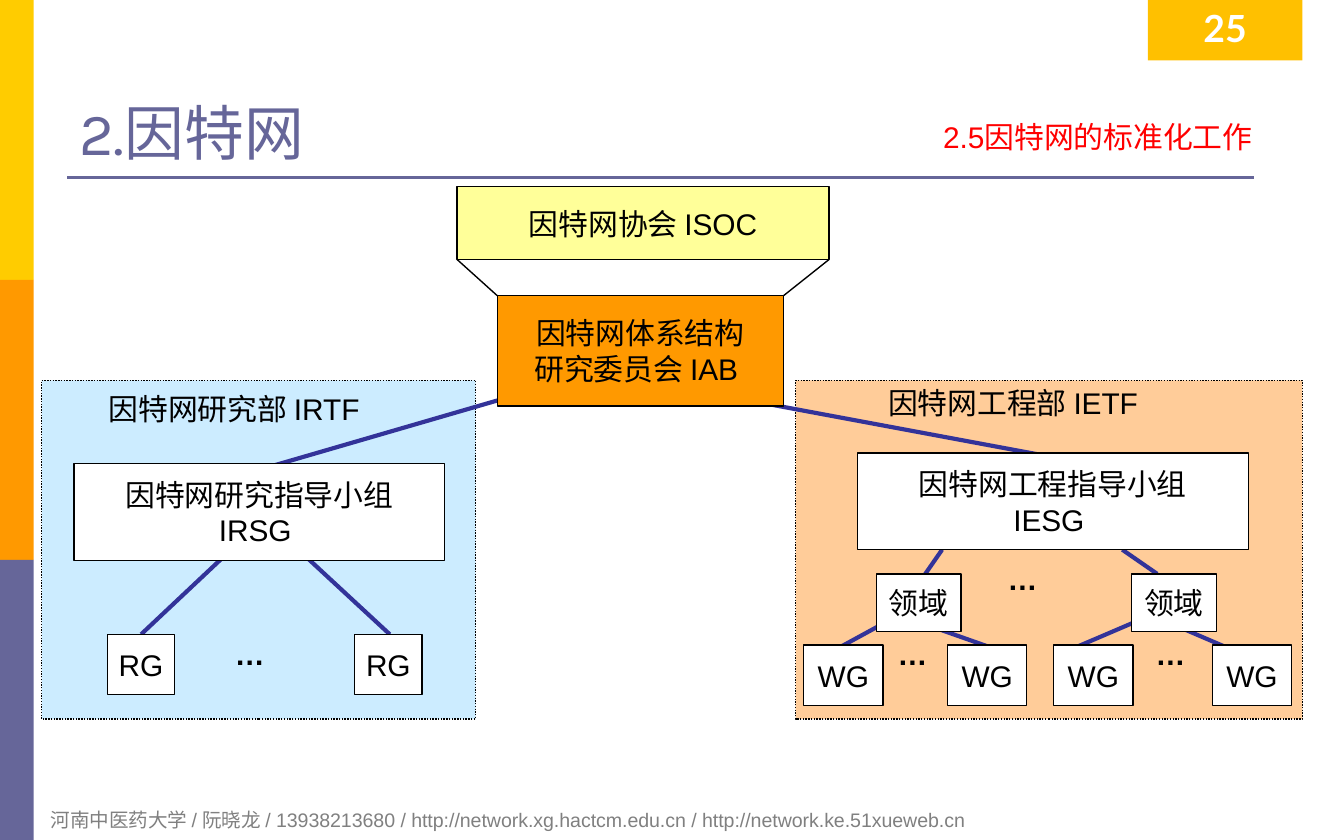
from lxml.etree import SubElement
from pptx import Presentation
from pptx.dml.color import RGBColor
from pptx.enum.dml import MSO_LINE
from pptx.enum.shapes import MSO_CONNECTOR, MSO_SHAPE
from pptx.enum.text import MSO_ANCHOR, PP_ALIGN
from pptx.oxml.ns import qn
from pptx.util import Inches, Pt


def paint(color_format, color):
    color_format.rgb = RGBColor.from_string(color)


def write(box, text, size=16, color="000000", font="Arial", align=PP_ALIGN.LEFT,
          anchor=MSO_ANCHOR.TOP, wrap=False, bold=False):
    frame = box.text_frame
    frame.text = text
    frame.word_wrap = wrap
    frame.vertical_anchor = anchor
    for para in frame.paragraphs:
        para.alignment = align
        for span in para.runs:
            span.font.size = Pt(size)
            span.font.name = font
            span.font.bold = bold
            paint(span.font.color, color)


deck = Presentation()
deck.slide_width = Inches(10)
deck.slide_height = Inches(6.25)
page = deck.slides.add_slide(deck.slide_layouts[6])
shapes = page.shapes

band_height = 6.25 / 3
bands = [(0, band_height * row, 0.25, band_height, color)
         for row, color in enumerate(["FFCC00", "FF9900", "666699"])]
panels = [(0.31, 2.83, 3.23, 2.52, "CCECFF"), (5.92, 2.83, 3.77, 2.52, "FFCC99")]
for left, top, width, height, color in bands + panels:
    area = shapes.add_shape(MSO_SHAPE.RECTANGLE, Inches(left), Inches(top),
                            Inches(width), Inches(height))
    area.shadow.inherit = False
    area.fill.solid()
    paint(area.fill.fore_color, color)
    if left == 0:
        area.line.fill.background()
    else:
        paint(area.line.color, "000000")
        area.line.width = Pt(0.75)
        area.line.dash_style = MSO_LINE.ROUND_DOT

rule = [(0.5, 1.32, 9.33, 1.32)]
funnel = [(3.4, 1.93, 3.7, 2.2), (6.17, 1.93, 5.83, 2.2)]
branches = [
    (2.05, 3.46, 3.7, 2.98), (7.72, 3.38, 5.25, 2.92),
    (1.72, 4.09, 1.05, 4.72), (2.22, 4.09, 2.9, 4.72),
    (7.01, 4.09, 6.85, 4.32), (8.35, 4.09, 8.61, 4.27),
    (6.59, 4.63, 6.26, 4.81), (6.84, 4.63, 7.35, 4.81),
    (8.44, 4.63, 8.02, 4.81), (8.69, 4.63, 9.11, 4.81),
]
for lines, color, weight in [(rule, "666699", 1.5), (funnel, "000000", 0.75),
                             (branches, "333399", 2.25)]:
    for ends in lines:
        connector = shapes.add_connector(MSO_CONNECTOR.STRAIGHT,
                                         *[Inches(value) for value in ends])
        paint(connector.line.color, color)
        connector.line.width = Pt(weight)
        SubElement(connector._element.spPr, qn("a:effectLst"))

units = [
    ("因特网协会 ISOC", 3.4, 1.39, 2.77, 0.54, "FFFF99"),
    ("因特网体系结构\n研究委员会 IAB ", 3.7, 2.2, 2.13, 0.82, "FF9900"),
    ("因特网研究指导小组\nIRSG ", 0.55, 3.45, 2.76, 0.72, "FFFFFF"),
    ("因特网工程指导小组\nIESG ", 6.38, 3.37, 2.91, 0.72, "FFFFFF"),
]
units += [("RG", left, 4.72, 0.5, 0.45, "FFFFFF") for left in (0.8, 2.64)]
units += [("领域", left, 4.27, 0.63, 0.43, "FFFFFF") for left in (6.52, 8.42)]
units += [("WG", left, 4.8, 0.59, 0.45, "FFFFFF") for left in (5.98, 7.05, 7.84, 9.02)]
for text, left, top, width, height, color in units:
    unit = shapes.add_shape(MSO_SHAPE.RECTANGLE, Inches(left), Inches(top),
                            Inches(width), Inches(height))
    unit.shadow.inherit = False
    unit.fill.solid()
    paint(unit.fill.fore_color, color)
    paint(unit.line.color, "000000")
    unit.line.width = Pt(0.75)
    write(unit, text, align=PP_ALIGN.CENTER, anchor=MSO_ANCHOR.MIDDLE)

for text, left, top, width in [
    ("因特网研究部 IRTF", 0.71, 2.86, 2.17), ("因特网工程部 IETF", 6.51, 2.81, 2.16),
    ("…", 1.65, 4.68, 0.43), ("…", 7.4, 4.12, 0.43),
    ("…", 6.58, 4.68, 0.43), ("…", 8.5, 4.68, 0.43),
]:
    label = shapes.add_textbox(Inches(left), Inches(top), Inches(width), Inches(0.37))
    write(label, text, bold=text == "…")

title = shapes.add_textbox(Inches(0.5), Inches(0.25), Inches(9), Inches(1.04))
write(title, "2.因特网", 32, "666699", "Karla", anchor=MSO_ANCHOR.BOTTOM, wrap=True)

section = shapes.add_textbox(Inches(6.26), Inches(0.84), Inches(3.15), Inches(0.39))
write(section, "2.5因特网的标准化工作", 16, "FF0000", align=PP_ALIGN.RIGHT, wrap=True)

number = shapes.add_shape(MSO_SHAPE.RECTANGLE, Inches(8.54), Inches(0),
                          Inches(1.15), Inches(0.45))
number.shadow.inherit = False
number.fill.solid()
paint(number.fill.fore_color, "FFC000")
number.line.fill.background()
write(number, "25", 20, "FFFFFF", "Lato", align=PP_ALIGN.CENTER, wrap=True, bold=True)

for box in (title, section, number):
    frame = box.text_frame
    frame.margin_left = frame.margin_right = Inches(0.09)
    frame.margin_top = frame.margin_bottom = Inches(0.04)

footer = shapes.add_textbox(Inches(0.28), Inches(5.96), Inches(8.35), Inches(0.28))
write(footer, "河南中医药大学 / 阮晓龙 / 13938213680 / http://network.xg.hactcm.edu.cn"
      " / http://network.ke.51xueweb.cn", 10.5, "808080", wrap=True)

deck.save("out.pptx")
